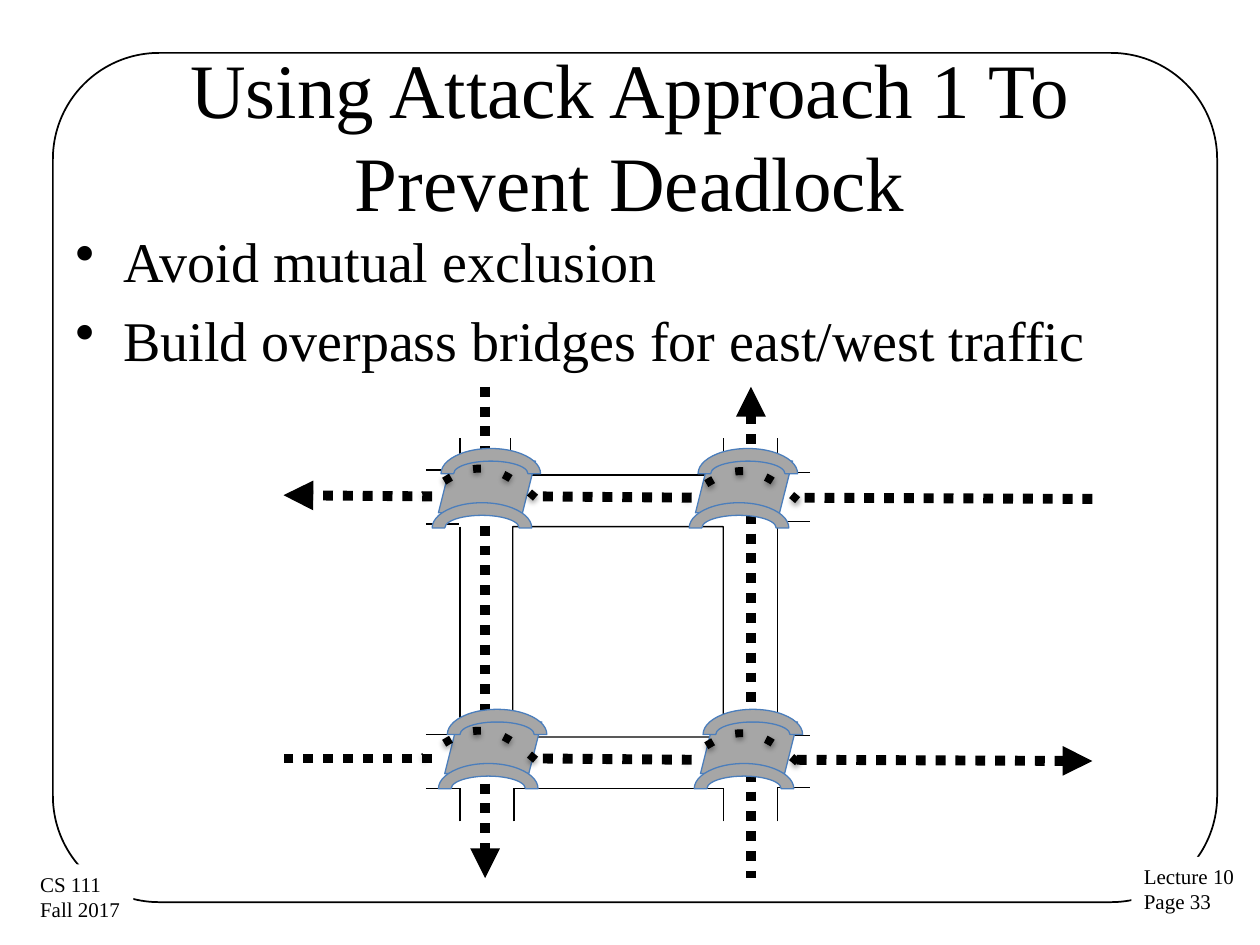
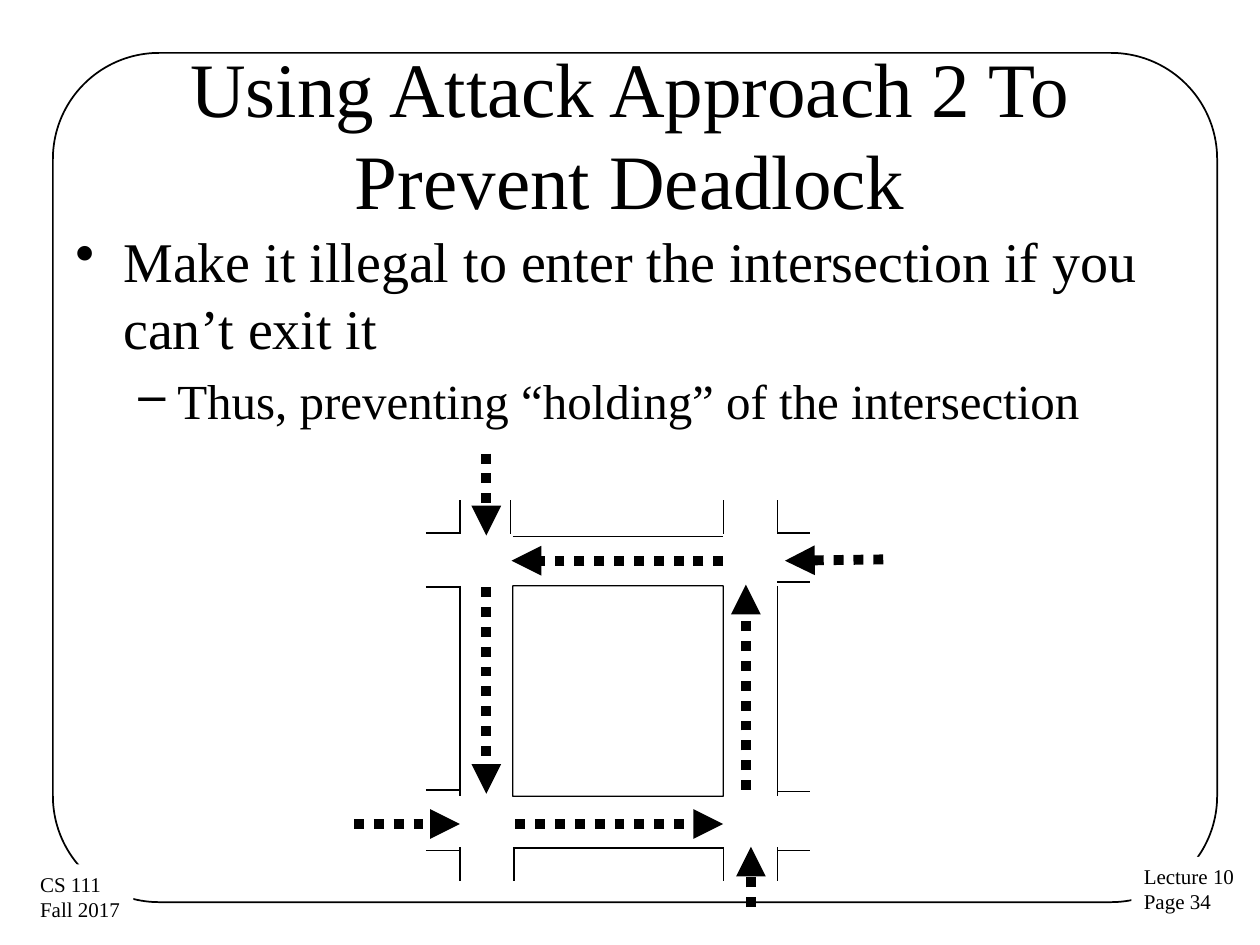
from lxml import etree
from pptx import Presentation
from pptx.dml.color import RGBColor
from pptx.enum.shapes import MSO_CONNECTOR, MSO_SHAPE
from pptx.enum.text import MSO_ANCHOR, PP_ALIGN
from pptx.oxml.ns import qn
from pptx.util import Inches, Pt

STRAIGHT = MSO_CONNECTOR.STRAIGHT
ROUNDED = MSO_SHAPE.ROUNDED_RECTANGLE
RECTANGLE = MSO_SHAPE.RECTANGLE
PARALLELOGRAM = MSO_SHAPE.PARALLELOGRAM
BLOCK_ARC = MSO_SHAPE.BLOCK_ARC
MIDDLE = MSO_ANCHOR.MIDDLE
CENTER = PP_ALIGN.CENTER

COLORS = {"ink": "000000", "paper": "FFFFFF", "bridge": "A6A6A6", "bridge_edge": "4B7EBC"}
FONT = "Times New Roman"
LEVELS = [("•", 32, 0.38, -0.38), ("–", 28, 0.81, -0.31)]
HUMP = [
    [(0, 0), (-0.14, -0.12), (-0.28, -0.23), (-0.43, -0.23)],
    [(-0.43, -0.23), (-0.58, -0.24), (-0.73, -0.13), (-0.89, -0.02)],
]
STEPS = 12


def color(name):
    return RGBColor.from_string(COLORS[name])


def add_xml(parent, tag, **attributes):
    return etree.SubElement(parent, qn(tag), attributes)


def bezier(controls, t):
    weights = [(1 - t) ** 3, 3 * t * (1 - t) ** 2, 3 * t * t * (1 - t), t ** 3]
    return tuple(sum(w * p[axis] for w, p in zip(weights, controls)) for axis in (0, 1))


class Deck:
    def __init__(self):
        self.prs = Presentation()
        self.prs.slide_width = Inches(10)
        self.prs.slide_height = Inches(7.5)
        self.slide = None

    def start(self, page, title, title_top, bullets):
        self.slide = self.prs.slides.add_slide(self.prs.slide_layouts[6])
        self.shape(ROUNDED, (0.42, 0.42, 9.24, 6.74), edge="ink", width=1, adjust=[0.125])
        self.footer((8.98, 6.8, 0.93, 0.51), ["Lecture 10", f"Page {page}"])
        self.footer((0.22, 6.86, 0.84, 0.51), ["CS 111", "Fall 2017"])
        self.title(title, title_top)
        self.bullets(bullets)

    def shape(self, kind, box, fill=None, edge=None, width=0.75, adjust=(), group=None):
        shapes = (group or self.slide).shapes
        item = shapes.add_shape(kind, *map(Inches, box))
        item.shadow.inherit = False
        for index, value in enumerate(adjust):
            item.adjustments[index] = value
        if fill:
            item.fill.solid()
            item.fill.fore_color.rgb = color(fill)
        else:
            item.fill.background()
        if edge:
            item.line.color.rgb = color(edge)
            item.line.width = Pt(width)
        else:
            item.line.fill.background()
        return item

    def style(self, paragraph, size):
        for run in paragraph.runs:
            run.font.name = FONT
            run.font.size = Pt(size)
            run.font.color.rgb = color("ink")

    def footer(self, box, lines):
        frame = self.shape(RECTANGLE, box, fill="paper").text_frame
        frame.word_wrap = False
        frame.text = "\n".join(lines)
        for paragraph in frame.paragraphs:
            paragraph.alignment = PP_ALIGN.LEFT
            self.style(paragraph, 12)

    def text_area(self, box):
        frame = self.slide.shapes.add_textbox(*map(Inches, box)).text_frame
        frame.word_wrap = True
        return frame

    def title(self, text, top):
        frame = self.text_area((0.5, top, 9, 1.25))
        frame.vertical_anchor = MIDDLE
        frame.text = text
        frame.paragraphs[0].alignment = CENTER
        self.style(frame.paragraphs[0], 44)

    def bullets(self, items):
        frame = self.text_area((0.5, 1.75, 9, 4.95))
        frame.text = "\n".join(text for _, text in items)
        for paragraph, (level, _) in zip(frame.paragraphs, items):
            mark, size, margin, indent = LEVELS[level]
            paragraph.level = level
            paragraph.space_before = Pt(size * 0.2)
            self.style(paragraph, size)
            properties = paragraph._p.get_or_add_pPr()
            properties.set("marL", str(Inches(margin)))
            properties.set("indent", str(Inches(indent)))
            add_xml(properties, "a:buChar", char=mark)

    def line(self, start, end, width=0.75):
        item = self.slide.shapes.add_connector(STRAIGHT, *map(Inches, (*start, *end)))
        item.line.color.rgb = color("ink")
        item.line.width = Pt(width)
        add_xml(item._element.spPr, "a:effectLst")
        return item.line

    def traffic(self, start, end, tip="tailEnd"):
        outline = self.line(start, end, 5.67)._get_or_add_ln()
        add_xml(outline, "a:prstDash", val="sysDot")
        if tip:
            add_xml(outline, f"a:{tip}", type="triangle")

    def roads(self, top, stub_top, stub_bottom, west_ys, east_ys):
        north, south = stub_top + 0.28, stub_bottom - 0.26
        self.shape(ROUNDED, (4.07, top, 1.67, 1.67), edge="ink", adjust=[0.001])
        for y in (north + 0.01, south):
            self.line((4.07, y), (5.74, y))
        for x in (3.65, 6.17):
            self.line((x, top), (x, top + 1.67))
        for x in (3.65, 4.05, 5.74, 6.17):
            self.line((x, stub_top), (x, stub_top + 0.27))
        for x in (3.65, 4.08, 5.74, 6.17):
            self.line((x, stub_bottom), (x, stub_bottom - 0.27))
        for x, ys in ((3.38, west_ys), (6.17, east_ys)):
            for y in ys:
                self.line((x, y), (x + 0.26, y))

    def bridge(self, x, y):
        group = self.slide.shapes.add_group_shape()
        paint = {"fill": "bridge", "edge": "bridge_edge", "group": group}
        self.shape(PARALLELOGRAM, (x, y, 0.77, 0.41), **paint)
        for dx, dy in ((0.02, -0.1), (-0.05, 0.33)):
            self.shape(BLOCK_ARC, (x + dx, y + dy, 0.79, 0.4), adjust=[108, 0, 0.25], **paint)

    def crossing(self, x, y):
        curve = [bezier(part, step / STEPS) for part in HUMP for step in range(1, STEPS + 1)]
        points = [(Inches(x + dx), Inches(y + dy)) for dx, dy in curve]
        builder = self.slide.shapes.build_freeform(Inches(x), Inches(y))
        builder.add_line_segments(points, close=False)
        item = builder.convert_to_shape()
        item.fill.background()
        item.line.color.rgb = color("ink")
        item.line.width = Pt(4.5)
        add_xml(item.line._get_or_add_ln(), "a:prstDash", val="dot")
        item.shadow.inherit = False
        effects = item._element.spPr.find(qn("a:effectLst"))
        shadow = add_xml(effects, "a:outerShdw", blurRad="40000", dist="20000",
                         dir="5400000", rotWithShape="0")
        tint = add_xml(shadow, "a:srgbClr", val=COLORS["ink"])
        add_xml(tint, "a:alpha", val="38000")


def overpass_slide(deck):
    deck.start(33, "Using Attack Approach 1 To Prevent Deadlock", 0.44, [
        (0, "Avoid mutual exclusion"),
        (0, "Build overpass bridges for east/west traffic"),
    ])
    deck.traffic((5.96, 3.07), (5.96, 6.97), "headEnd")
    deck.roads(4.18, 3.48, 6.52, (3.73, 4.16, 5.83, 6.26), (3.75, 4.14, 5.84, 6.25))
    deck.traffic((3.85, 3.07), (3.85, 6.97))
    deck.traffic((3.43, 3.94), (2.25, 3.93))
    for x, y in ((3.48, 3.66), (5.52, 3.66), (5.56, 5.73), (3.53, 5.73)):
        deck.bridge(x, y)
    deck.traffic((3.43, 6.02), (2.25, 6.02), None)
    for y, east_tip in ((3.95, None), (6.03, "headEnd")):
        deck.traffic((8.67, y + 0.01), (6.31, y), east_tip)
        deck.traffic((5.49, y), (4.29, y - 0.01), None)
        deck.crossing(6.33, y + 0.02)
        deck.crossing(4.25, y)


def no_holding_slide(deck):
    deck.start(34, "Using Attack Approach 2 To Prevent Deadlock", 0.43, [
        (0, "Make it illegal to enter the intersection if you can’t exit it"),
        (1, "Thus, preventing “holding” of the intersection"),
    ])
    deck.roads(4.65, 3.97, 6.99, (4.23, 4.66, 6.27, 6.75), (4.23, 4.62, 6.28, 6.75))
    for start, end in (
        ((5.74, 4.45), (4.06, 4.45)),
        ((3.86, 4.66), (3.86, 6.3)),
        ((4.09, 6.54), (5.74, 6.54)),
        ((5.92, 6.27), (5.92, 4.64)),
        ((7.01, 4.44), (6.23, 4.45)),
        ((3.86, 3.6), (3.86, 4.25)),
        ((2.81, 6.54), (3.65, 6.54)),
        ((5.96, 7.2), (5.96, 6.72)),
    ):
        deck.traffic(start, end)


def main():
    deck = Deck()
    overpass_slide(deck)
    no_holding_slide(deck)
    deck.prs.save("out.pptx")


if __name__ == "__main__":
    main()
